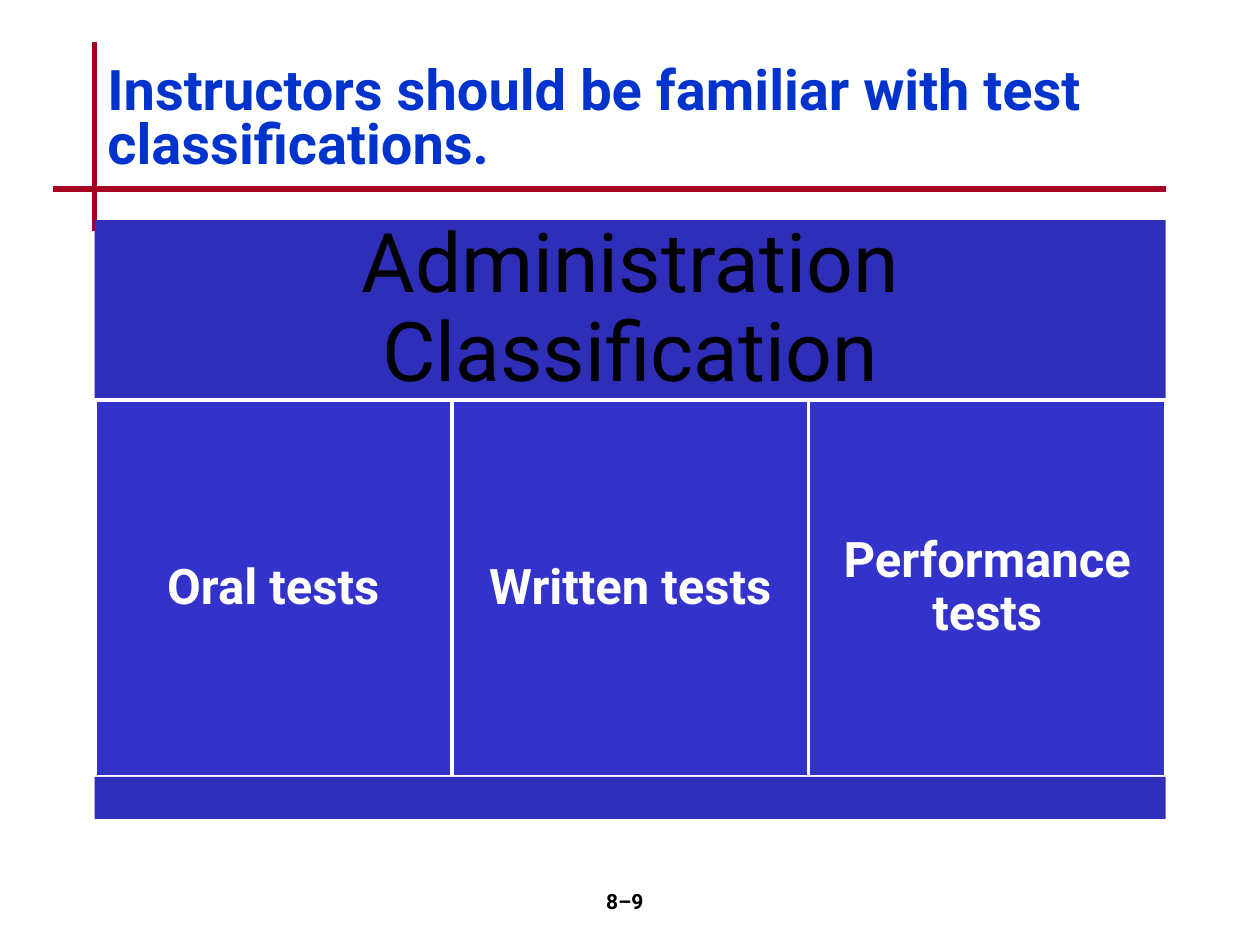
"""Build the slide on administration classifications of tests."""
from lxml.etree import SubElement
from pptx import Presentation
from pptx.dml.color import RGBColor
from pptx.enum.shapes import MSO_CONNECTOR, MSO_SHAPE
from pptx.enum.text import MSO_ANCHOR as ANCHOR, MSO_AUTO_SIZE, PP_ALIGN as ALIGN
from pptx.oxml.ns import qn
from pptx.util import Cm, Pt

RED = RGBColor(0xA5, 0x00, 0x21)
TITLE_BLUE = RGBColor(0x00, 0x33, 0xCC)
BAND_BLUE = RGBColor(0x2E, 0x2E, 0xB9)
BOX_BLUE = RGBColor(0x33, 0x33, 0xCC)
BLACK = RGBColor(0x00, 0x00, 0x00)
WHITE = RGBColor(0xFF, 0xFF, 0xFF)

LEFT, WIDTH = Cm(1.91), Cm(21.59)
RIGHT = LEFT + WIDTH
BAND_TOP, BOX_TOP, FOOT_TOP = Cm(4.44), Cm(8.06), Cm(15.66)


def set_text(sp, text, size, color, bold=True, align=ALIGN.CENTER,
             spacing=0.9, anchor=ANCHOR.MIDDLE, inset=None):
    tf = sp.text_frame
    tf.word_wrap = True
    tf.auto_size = MSO_AUTO_SIZE.NONE
    tf.vertical_anchor = anchor
    if inset is not None:
        tf.margin_left = tf.margin_right = inset
        tf.margin_top = tf.margin_bottom = inset
    p = tf.paragraphs[0]
    p.alignment = align
    p.line_spacing = spacing
    r = p.add_run()
    r.text = text
    r.font.name = "Roboto"
    r.font.size = Pt(size)
    r.font.bold = bold
    r.font.color.rgb = color


def add_box(left, top, width, height, fill, line=None):
    sp = s.shapes.add_shape(MSO_SHAPE.RECTANGLE, left, top, width, height)
    sp.shadow.inherit = False
    sp.fill.solid()
    sp.fill.fore_color.rgb = fill
    if line is None:
        sp.line.fill.background()
    else:
        sp.line.color.rgb = line
        sp.line.width = Pt(2)
    return sp


prs = Presentation()
prs.slide_width, prs.slide_height = Cm(25.4), Cm(19.05)
s = prs.slides.add_slide(prs.slide_layouts[5])

rules = [
    (LEFT, Cm(0.85), LEFT, Cm(4.66)),
    (Cm(1.06), Cm(3.81), RIGHT, Cm(3.81)),
]
for ends in rules:
    rule = s.shapes.add_connector(MSO_CONNECTOR.STRAIGHT, *ends)
    rule.line.color.rgb = RED
    rule.line.width = Pt(3)
    SubElement(rule._element.spPr, qn("a:effectLst"))

title = s.shapes.title
title.left, title.top, title.width, title.height = LEFT, Cm(0.85), WIDTH, Cm(3.18)
set_text(title, "Instructors should be familiar with test classifications.",
         32, TITLE_BLUE, align=ALIGN.LEFT, spacing=0.8)

band = add_box(LEFT, BAND_TOP, WIDTH, BOX_TOP - BAND_TOP, BAND_BLUE)
set_text(band, "Administration Classification", 47, BLACK, bold=False, inset=Cm(0.5))

tests = ["Oral tests", "Written tests", "Performance tests"]
box_width = WIDTH // len(tests)
for i, name in enumerate(tests):
    box = add_box(LEFT + i * box_width, BOX_TOP, box_width, FOOT_TOP - BOX_TOP,
                  BOX_BLUE, line=WHITE)
    set_text(box, name, 28, WHITE, inset=Cm(0.3))

add_box(LEFT, FOOT_TOP, WIDTH, Cm(0.85), BAND_BLUE)

number = s.shapes.add_textbox(Cm(9.95), Cm(17.78), Cm(5.29), Cm(1.27))
set_text(number, "8–9", 12, BLACK, spacing=1.0, anchor=ANCHOR.TOP)

prs.save("out.pptx")
